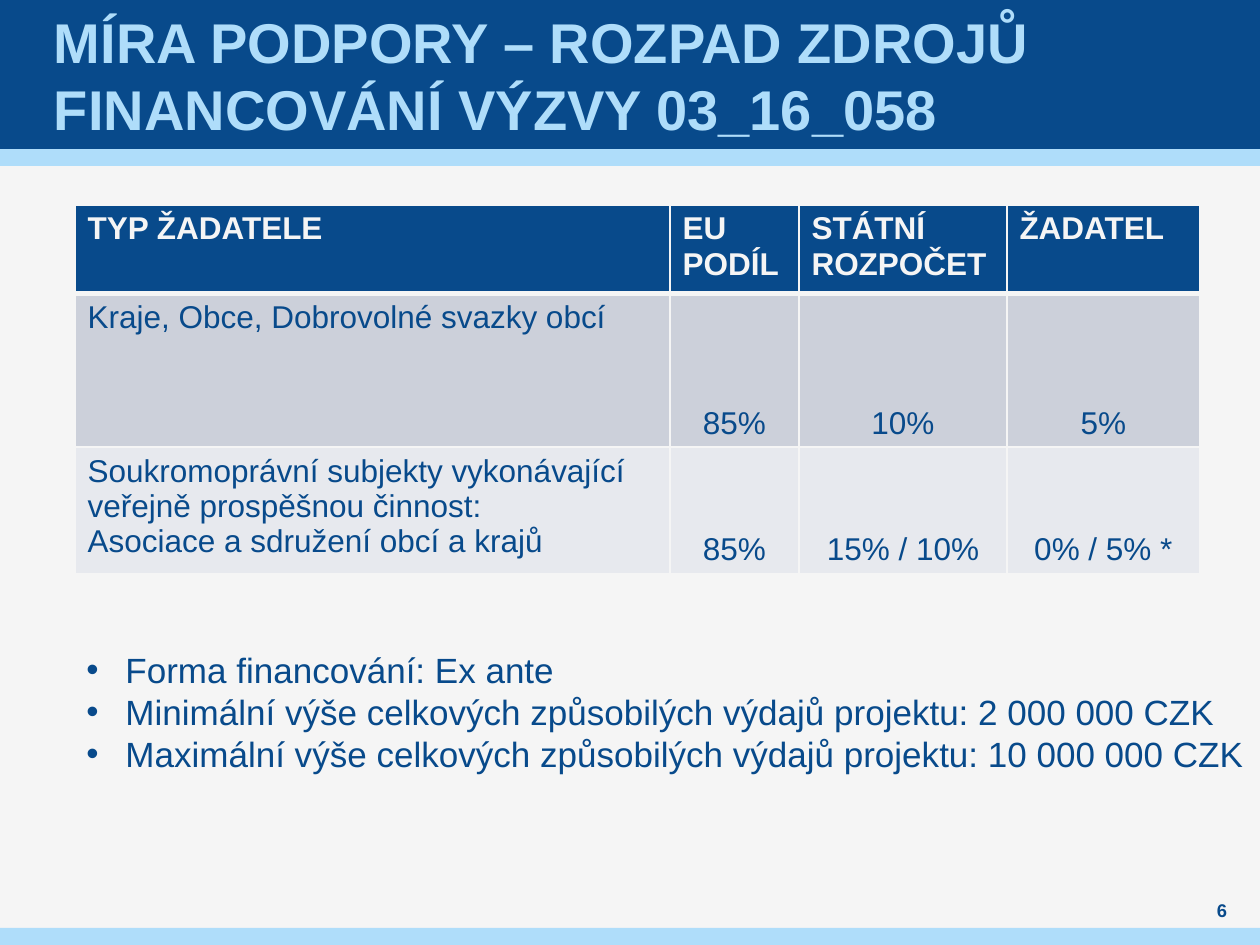
from lxml.etree import SubElement
from pptx import Presentation
from pptx.dml.color import RGBColor
from pptx.enum.shapes import MSO_SHAPE
from pptx.enum.text import MSO_ANCHOR, PP_ALIGN
from pptx.oxml import parse_xml
from pptx.oxml.ns import nsdecls, qn
from pptx.util import Pt

PX = 914400 // 126
W, H = 1260, 945

NAVY = RGBColor(0x08, 0x4A, 0x8B)
SKY = RGBColor(0xAF, 0xDD, 0xFA)
PAPER = RGBColor(0xF5, 0xF5, 0xF5)
BANDS = (RGBColor(0xCC, 0xD0, 0xDA), RGBColor(0xE7, 0xE9, 0xEE))


class Deck:
    font = "Arial"

    def __init__(self):
        self.prs = Presentation()
        self.prs.slide_width, self.prs.slide_height = W * PX, H * PX
        self.s = self.prs.slides.add_slide(self.prs.slide_layouts[6])
        fill = self.s.background.fill
        fill.solid()
        fill.fore_color.rgb = PAPER

    def style(self, tf, size, color, bold=False, align=PP_ALIGN.LEFT):
        for p in tf.paragraphs:
            p.alignment = align
            for r in p.runs:
                r.font.name, r.font.size, r.font.bold = self.font, Pt(size), bold
                r.font.color.rgb = color

    def bar(self, y, h, color):
        sp = self.s.shapes.add_shape(MSO_SHAPE.RECTANGLE, 0, y * PX, W * PX, h * PX)
        sp.shadow.inherit = False
        sp.fill.solid()
        sp.fill.fore_color.rgb = color
        sp.line.fill.background()

    def text(self, box, text, size, color, bold=False, align=PP_ALIGN.LEFT,
             inset=None, anchor=MSO_ANCHOR.TOP, wrap=True):
        tf = self.s.shapes.add_textbox(*(v * PX for v in box)).text_frame
        tf.word_wrap, tf.vertical_anchor = wrap, anchor
        if inset is not None:
            tf.margin_left = tf.margin_right = inset * PX
            tf.margin_top = tf.margin_bottom = 0
        tf.text = text
        self.style(tf, size, color, bold, align)
        return tf

    def bullets(self, box, items, size, color, indent):
        tf = self.text(box, "\n".join(items), size, color, wrap=False)
        for p in tf.paragraphs:
            pPr = p._p.get_or_add_pPr()
            pPr.set("marL", str(indent * PX))
            pPr.set("indent", str(-indent * PX))
            SubElement(pPr, qn("a:buFont")).set("typeface", self.font)
            SubElement(pPr, qn("a:buChar")).set("char", "•")

    def borders(self, cell, **widths):
        tcPr = cell._tc.get_or_add_tcPr()
        for i, side in enumerate("LRTB"):
            tcPr.insert(i, parse_xml(
                f'<a:ln{side} {nsdecls("a")} w="{Pt(widths.get(side, 1))}"><a:solidFill>'
                f'<a:srgbClr val="{PAPER}"/></a:solidFill></a:ln{side}>'))

    def table(self, x, y, cols, heights, rows, size):
        shape = self.s.shapes.add_table(len(rows), len(cols), x * PX, y * PX,
                                        sum(cols) * PX, sum(heights) * PX)
        table = shape.table
        for column, width in zip(table.columns, cols):
            column.width = width * PX
        for i, (row, height) in enumerate(zip(rows, heights)):
            table.rows[i].height = height * PX
            header = i == 0
            for j, value in enumerate(row):
                cell = table.cell(i, j)
                cell.text = value
                cell.fill.solid()
                cell.fill.fore_color.rgb = NAVY if header else BANDS[i - 1]
                figure = j > 0 and not header
                cell.vertical_anchor = MSO_ANCHOR.BOTTOM if figure else MSO_ANCHOR.TOP
                self.style(cell.text_frame, size, PAPER if header else NAVY, header,
                           PP_ALIGN.CENTER if figure else PP_ALIGN.LEFT)
                self.borders(cell, B=3 if header else 1, T=3 if i == 1 else 1)


def main():
    d = Deck()

    # Bands and title
    d.bar(149, 17, SKY)
    d.bar(0, 149, NAVY)
    d.bar(928, 17, SKY)
    d.text((49, 0, 1160, 149), "MÍRA PODPORY – ROZPAD ZDROJŮ FINANCOVÁNÍ VÝZVY 03_16_058",
           32, SKY, bold=True, inset=5, anchor=MSO_ANCHOR.MIDDLE)

    # Funding shares
    d.table(75, 205, (595, 129, 208, 193), (82, 154, 118), (
        ("TYP ŽADATELE", "EU PODÍL", "STÁTNÍ ROZPOČET", "ŽADATEL"),
        ("Kraje, Obce, Dobrovolné svazky obcí", "85%", "10%", "5%"),
        ("Soukromoprávní subjekty vykonávající veřejně prospěšnou činnost:\n"
         "Asociace a sdružení obcí a krajů", "85%", "15% / 10%", "0% / 5% *"),
    ), 18)

    # Financing terms
    d.bullets((74, 642, 1192, 183), (
        "Forma financování: Ex ante",
        "Minimální výše celkových způsobilých výdajů projektu: 2 000 000 CZK",
        "Maximální výše celkových způsobilých výdajů projektu: 10 000 000 CZK",
    ), 20, NAVY, 39)

    # Page number
    d.text((1190, 898, 64, 25), "6", 10.5, NAVY, bold=True, align=PP_ALIGN.CENTER,
           inset=0, anchor=MSO_ANCHOR.MIDDLE)

    d.prs.save("out.pptx")


if __name__ == "__main__":
    main()
